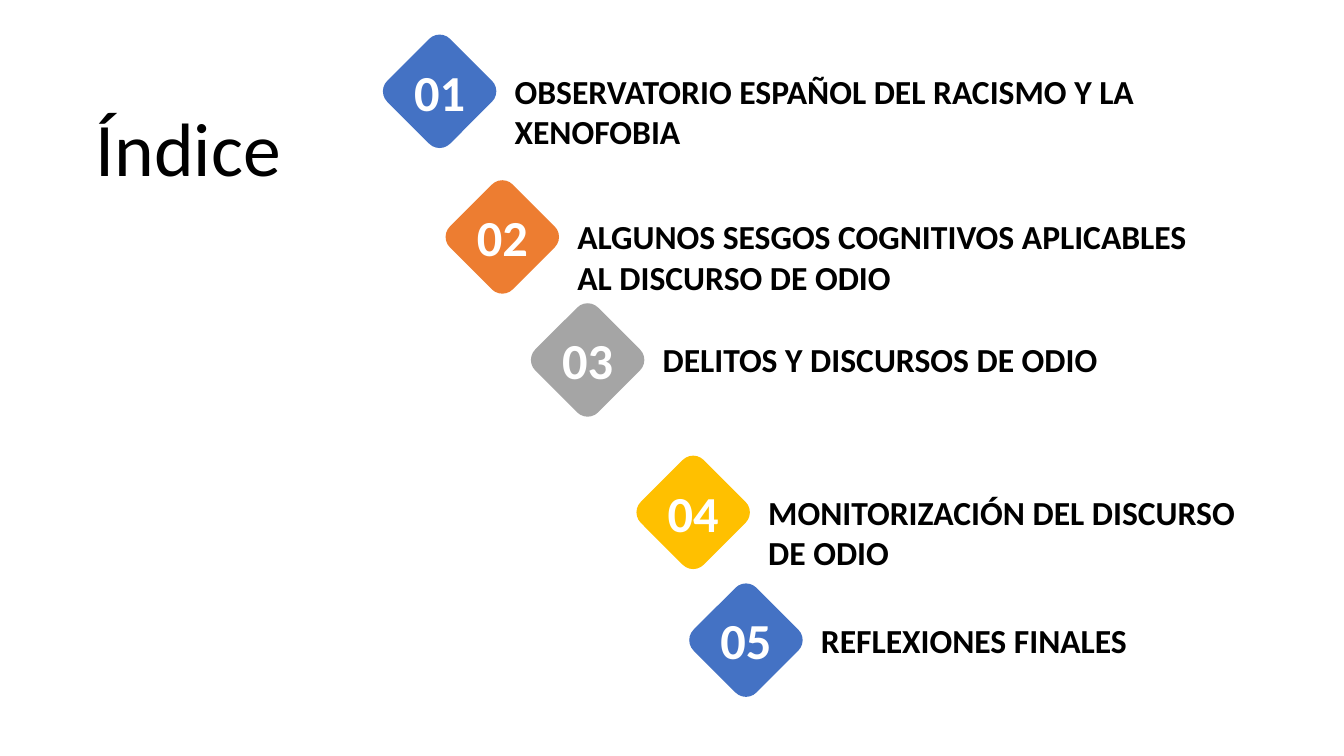
from pptx import Presentation
from pptx.dml.color import RGBColor
from pptx.enum import shapes, text
from pptx.util import Cm, Pt

FONT = "Calibri"
COLOURS = {
    "ink": "000000",
    "number": "FFFFFF",
    "blue": "4472C4",
    "orange": "ED7D31",
    "grey": "A5A5A5",
    "yellow": "FFC000",
}
TITLE = "Índice"
# heading, diamond colour, diamond left, diamond top, heading width, heading height (cm)
ENTRIES = [
    ("OBSERVATORIO ESPAÑOL DEL RACISMO Y LA XENOFOBIA", "blue", 9.96, 1.18, 17.35, 2.31),
    ("ALGUNOS SESGOS COGNITIVOS APLICABLES AL DISCURSO DE ODIO", "orange", 11.54, 4.85, 16.21, 2.31),
    ("DELITOS Y DISCURSOS DE ODIO", "grey", 13.69, 7.95, 14.07, 1.27),
    ("MONITORIZACIÓN DEL DISCURSO DE ODIO", "yellow", 16.35, 11.79, 13.03, 2.31),
    ("REFLEXIONES FINALES", "blue", 17.68, 15.01, 13.03, 1.27),
]
DIAMOND_SIDE = 2.24
NUMBER_WIDTH, NUMBER_HEIGHT = 2.67, 1.8
HEADING_OFFSET = (2.71, 0.47)
INSET_X, INSET_Y = 0.3, 0.13


def colour(name):
    return RGBColor.from_string(COLOURS[name])


def add_text(parent, wording, frame, size, ink="ink", bold=False, inset=(INSET_X, INSET_Y)):
    box = parent.add_textbox(*map(Cm, frame))
    body = box.text_frame
    body.word_wrap = True
    body.margin_left = body.margin_right = Cm(inset[0])
    body.margin_top = body.margin_bottom = Cm(inset[1])
    para = body.paragraphs[0]
    para.text = wording
    para.font.name = FONT
    para.font.size = Pt(size)
    para.font.bold = bold
    para.font.color.rgb = colour(ink)
    return body


def add_entry(page, number, heading, fill, left, top, width, height):
    """Group a heading with its numbered diamond."""
    group = page.shapes.add_group_shape().shapes
    shift_x, shift_y = HEADING_OFFSET
    add_text(group, heading, (left + shift_x, top + shift_y, width, height), 24, bold=True)

    diamond = group.add_shape(
        shapes.MSO_SHAPE.ROUNDED_RECTANGLE,
        Cm(left), Cm(top), Cm(DIAMOND_SIDE), Cm(DIAMOND_SIDE),
    )
    diamond.rotation = 315
    diamond.shadow.inherit = False
    diamond.fill.solid()
    diamond.fill.fore_color.rgb = colour(fill)
    diamond.line.fill.background()

    number_left = left + (DIAMOND_SIDE - NUMBER_WIDTH) / 2
    number_top = top + (DIAMOND_SIDE - NUMBER_HEIGHT) / 2
    label = add_text(
        group, f"{number:02}", (number_left, number_top, NUMBER_WIDTH, NUMBER_HEIGHT),
        36, "number", bold=True,
    )
    label.paragraphs[0].alignment = text.PP_ALIGN.CENTER


def main():
    deck = Presentation()
    deck.slide_width, deck.slide_height = Cm(33.87), Cm(19.05)
    page = deck.slides.add_slide(deck.slide_layouts[6])
    title = add_text(page.shapes, TITLE, (2.16, 2.41, 7.54, 2.57), 54, inset=(0.25, 0.13))
    title.vertical_anchor = text.MSO_ANCHOR.MIDDLE
    for number, entry in enumerate(ENTRIES, start=1):
        add_entry(page, number, *entry)
    deck.save("out.pptx")


if __name__ == "__main__":
    main()
